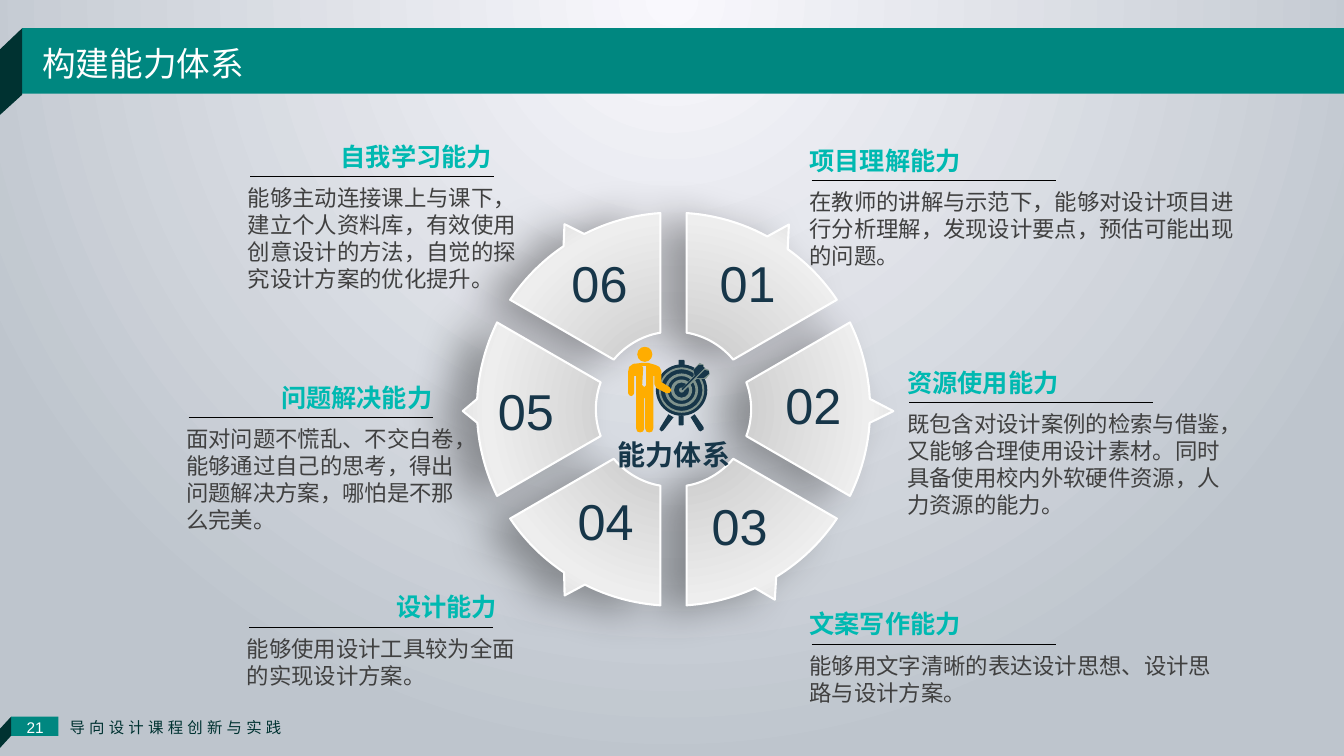
import math

import lxml.etree
import pptx
import pptx.dml.color
import pptx.enum.shapes
import pptx.enum.text
import pptx.oxml.ns
import pptx.util

Inches = pptx.util.Inches
Pt = pptx.util.Pt
qn = pptx.oxml.ns.qn
rgb = pptx.dml.color.RGBColor.from_string
MSO_SHAPE = pptx.enum.shapes.MSO_SHAPE
PP_ALIGN = pptx.enum.text.PP_ALIGN

COLORS = {
    "teal": "008780", "deep": "003231", "aqua": "00B9B1", "navy": "173649",
    "sage": "80938D", "amber": "FFAD00", "body": "404040",
    "white": "FFFFFF", "black": "000000",
}
CJK = "Noto Sans CJK SC"

deck = pptx.Presentation()
deck.slide_width, deck.slide_height = Inches(13.33), Inches(7.5)
slide = deck.slides.add_slide(deck.slide_layouts[5])
shapes = slide.shapes


def write(words, box, size, color, holder=None, font=CJK, bold=False, wrap=False,
          align=PP_ALIGN.LEFT, margins=(0.1, 0.05), tracking=0):
    """Put formatted text in a new text box, or in the given placeholder."""
    left, top, width, height = [Inches(v) for v in box]
    if holder is None:
        holder = shapes.add_textbox(left, top, width, height)
    else:
        holder.left, holder.top, holder.width, holder.height = left, top, width, height
    frame = holder.text_frame
    frame.word_wrap = wrap
    frame.auto_size = pptx.enum.text.MSO_AUTO_SIZE.NONE
    frame.vertical_anchor = pptx.enum.text.MSO_ANCHOR.TOP
    frame.margin_left = frame.margin_right = Inches(margins[0])
    frame.margin_top = frame.margin_bottom = Inches(margins[1])
    line = frame.paragraphs[0]
    line.alignment = align
    line.line_spacing = Pt(size * 1.2)
    run = line.add_run()
    run.text = words
    run.font.size, run.font.bold, run.font.name = Pt(size), bold, font
    run.font.color.rgb = rgb(COLORS[color])
    props = run.font._element
    lxml.etree.SubElement(props, qn("a:ea")).set("typeface", font)
    if tracking:
        props.set("spc", str(tracking * 100))


def draw(figure, color):
    """Draw a preset (kind, box) or closed outlines (lists of points), without a line."""
    if isinstance(figure, tuple):
        kind, box = figure
        part = shapes.add_shape(kind, *[Inches(v) for v in box])
    else:
        outlines = [[(Inches(x), Inches(y)) for x, y in points] for points in figure]
        builder = shapes.build_freeform(*outlines[0][0], scale=1.0)
        builder.add_line_segments(outlines[0][1:], close=True)
        for points in outlines[1:]:
            builder.move_to(*points[0])
            builder.add_line_segments(points[1:], close=True)
        part = builder.convert_to_shape()
    part.shadow.inherit = False
    part.fill.solid()
    part.fill.fore_color.rgb = rgb(COLORS[color])
    part.line.fill.background()
    return part


# Wheel: six sectors with straight gaps, each with a pointer on its rim
CENTER_X, CENTER_Y, OUTER, INNER, HALF_GAP = 6.68, 4.06, 1.95, 0.77, 0.13
pointers = [(-58, 2.16), (0.5, 2.18), (62, 2.14), (120.3, 2.14), (179.5, 2.09), (239.5, 2.13)]
sectors = []
for number, (tip_angle, tip_radius) in enumerate(pointers):
    middle = 60 * number - 60
    rim = 30 - math.degrees(math.asin(HALF_GAP / OUTER))
    hub = 30 - math.degrees(math.asin(HALF_GAP / INNER))
    before, after = tip_angle - 3.5, tip_angle + 3.5
    polar = [(middle - rim + (before - middle + rim) * i / 12, OUTER) for i in range(13)]
    polar.append((tip_angle, tip_radius))
    polar += [(after + (middle + rim - after) * i / 12, OUTER) for i in range(13)]
    polar += [(middle + hub - 2 * hub * i / 16, INNER) for i in range(17)]
    sectors.append([(CENTER_X + r * math.cos(math.radians(a)),
                     CENTER_Y + r * math.sin(math.radians(a))) for a, r in polar])
wheel = draw(sectors, "white")
wheel.line.color.rgb = rgb(COLORS["white"])
wheel.line.width = Pt(1.5)

# Radial gradients of the background and the wheel
slide.background.fill.gradient()
wheel.fill.gradient()
for owner, stops, focus in [
    (slide.element, [(0, "F9F8FD"), (100, "BEC5CD")], (50, -80, 50, 180)),
    (wheel.element, [(0, "BFBFBF"), (66, "EEEEEE"), (100, "C1C1C1")], (50, 50, 50, 50)),
]:
    gradient = owner.xpath(".//a:gradFill")[0]
    for child in list(gradient):
        gradient.remove(child)
    stop_list = lxml.etree.SubElement(gradient, qn("a:gsLst"))
    for position, color in stops:
        stop = lxml.etree.SubElement(stop_list, qn("a:gs"), pos=str(position * 1000))
        lxml.etree.SubElement(stop, qn("a:srgbClr"), val=color)
    circle = lxml.etree.SubElement(gradient, qn("a:path"))
    circle.set("path", "circle")
    lxml.etree.SubElement(circle, qn("a:fillToRect"),
                          {side: str(v * 1000) for side, v in zip("ltrb", focus)})

# Soft shadow of the wheel, falling to the left
effects = wheel.element.spPr.find(qn("a:effectLst"))
shadow = lxml.etree.SubElement(effects, qn("a:outerShdw"), blurRad=str(Pt(30)),
                               dist=str(Pt(20)), dir=str(170 * 60000), rotWithShape="0")
shade = lxml.etree.SubElement(shadow, qn("a:srgbClr"), val=COLORS["black"])
lxml.etree.SubElement(shade, qn("a:alpha"), val="35000")

# Sector numbers
number_spots = [(7.04, 2.45), (7.69, 3.66), (6.96, 4.86), (5.63, 4.81), (4.84, 3.72), (5.57, 2.45)]
for number, (left, top) in enumerate(number_spots, 1):
    write(f"{number:02}", (left, top, 0.76, 0.71), 36, "navy", font="Arial")

# Abilities: heading, its left edge, left and top of the block, width, description
abilities = [
    ("项目理解能力", 7.93, 7.93, 1.39, 4.44,
     "在教师的讲解与示范下，能够对设计项目进行分析理解，发现设计要点，预估可能出现的问题。"),
    ("资源使用能力", 8.9, 8.9, 3.59, 3.42,
     "既包含对设计案例的检索与借鉴，又能够合理使用设计素材。同时具备使用校内外软硬件资源，人力资源的能力。"),
    ("文案写作能力", 7.93, 7.93, 5.99, 4.25,
     "能够用文字清晰的表达设计思想、设计思路与设计方案。"),
    ("设计能力", 3.83, 2.35, 5.82, 2.86,
     "能够使用设计工具较为全面的实现设计方案。"),
    ("问题解决能力", 2.69, 1.75, 3.74, 2.86,
     "面对问题不慌乱、不交白卷，能够通过自己的思考，得出问题解决方案，哪怕是不那么完美。"),
    ("自我学习能力", 3.28, 2.36, 1.35, 2.91,
     "能够主动连接课上与课下，建立个人资料库，有效使用创意设计的方法，自觉的探究设计方案的优化提升。"),
]
for heading, heading_left, left, top, width, description in abilities:
    write(heading, (heading_left, top, 2.12, 0.4), 18, "aqua", bold=True, wrap=True)
    rule = shapes.add_connector(
        pptx.enum.shapes.MSO_CONNECTOR.STRAIGHT, Inches(left + 0.12), Inches(top + 0.4),
        Inches(left + 2.54), Inches(top + 0.4))
    rule.line.color.rgb = rgb(COLORS["black"])
    rule.line.width = Pt(0.5)
    lxml.etree.SubElement(rule.element.spPr, qn("a:effectLst"))
    write(description, (left, top + 0.43, width, 1.18), 16, "body", wrap=True)

write("能力体系", (6.03, 4.29, 1.75, 0.44), 20, "navy", bold=True, wrap=True)

# Target on its stand
TARGET_X, TARGET_Y = 6.76, 3.87
for leg in [
    [(6.63, 4.11), (6.68, 4.14), (6.58, 4.27), (6.56, 4.28), (6.54, 4.26), (6.55, 4.24)],
    [(6.89, 4.11), (6.85, 4.14), (6.93, 4.27), (6.95, 4.28), (6.98, 4.26), (6.98, 4.24)],
]:
    draw([leg], "navy")
for post in [(6.73, 4.12, 0.05, 0.1), (6.73, 3.57, 0.06, 0.06)]:
    draw((MSO_SHAPE.ROUNDED_RECTANGLE, post), "navy")
for kind, size, band, color in [
    (MSO_SHAPE.OVAL, 0.51, None, "navy"), (MSO_SHAPE.DONUT, 0.45, 0.04, "sage"),
    (MSO_SHAPE.DONUT, 0.33, 0.08, "sage"), (MSO_SHAPE.DONUT, 0.21, 0.14, "sage"),
    (MSO_SHAPE.OVAL, 0.05, None, "sage"),
]:
    ring = draw((kind, (TARGET_X - size / 2, TARGET_Y - size / 2, size, size)), color)
    if band:
        ring.adjustments[0] = band

# Dart: pale rim, shaft and two feathers
for outline, color in [
    ([(6.75, 3.87), (6.88, 3.73), (6.88, 3.66), (6.94, 3.6), (6.98, 3.62), (6.98, 3.65),
      (7.03, 3.67), (7.04, 3.71), (7, 3.76), (6.91, 3.76), (6.78, 3.88)], "sage"),
    ([(6.76, 3.86), (6.98, 3.64), (6.99, 3.65), (6.77, 3.87)], "navy"),
    ([(6.89, 3.73), (6.88, 3.67), (6.93, 3.62), (6.97, 3.62), (6.97, 3.65)], "navy"),
    ([(6.91, 3.75), (6.98, 3.75), (7.03, 3.71), (7.03, 3.68), (6.99, 3.67)], "navy"),
]:
    draw([outline], color)

# Person pointing at the target, with a cut-out tie
draw((MSO_SHAPE.OVAL, (6.32, 3.44, 0.15, 0.15)), "amber")
suit = [
    (6.64, 3.84), (6.56, 3.79), (6.56, 3.68), (6.54, 3.64), (6.5, 3.62), (6.43, 3.6), (6.37, 3.6),
    (6.28, 3.61), (6.24, 3.64), (6.23, 3.69), (6.23, 3.9), (6.24, 3.92), (6.26, 3.93),
    (6.28, 3.92), (6.29, 3.9), (6.29, 3.73), (6.31, 3.73), (6.31, 4.25), (6.32, 4.28),
    (6.35, 4.29), (6.38, 4.28), (6.39, 4.25), (6.39, 3.95), (6.4, 3.95), (6.4, 4.25),
    (6.41, 4.28), (6.44, 4.29), (6.47, 4.28), (6.48, 4.25), (6.48, 3.73), (6.49, 3.73),
    (6.49, 3.81), (6.51, 3.85), (6.61, 3.9), (6.64, 3.9), (6.66, 3.87),
]
tie = [(6.39, 3.84), (6.37, 3.82), (6.38, 3.65), (6.37, 3.63), (6.41, 3.63), (6.41, 3.82)]
draw([suit, tie], "amber")

# Title band, page tag and footer
draw((MSO_SHAPE.RECTANGLE, (0.22, 0.28, 13.11, 0.65)), "teal")
draw((MSO_SHAPE.RECTANGLE, (0.11, 7.11, 0.47, 0.19)), "teal")
draw([[(0, 0.49), (0, 1.14), (0.22, 0.94), (0.22, 0.28)]], "deep")
draw([[(0, 7.23), (0, 7.42), (0.11, 7.3), (0.11, 7.11)]], "deep")
write("21", (0.12, 7.05, 0.46, 0.32), 11, "white", font="Arial",
      align=PP_ALIGN.CENTER, margins=(0.13, 0.07))
write("导向设计课程创新与实践", (0.56, 7.05, 2.4, 0.32), 11, "deep",
      margins=(0.13, 0.07), tracking=3)
shapes.element.append(shapes.title.element)
write("构建能力体系", (0.32, 0.38, 2.6, 0.5), 24, "white", holder=shapes.title, wrap=True)

deck.save("out.pptx")
